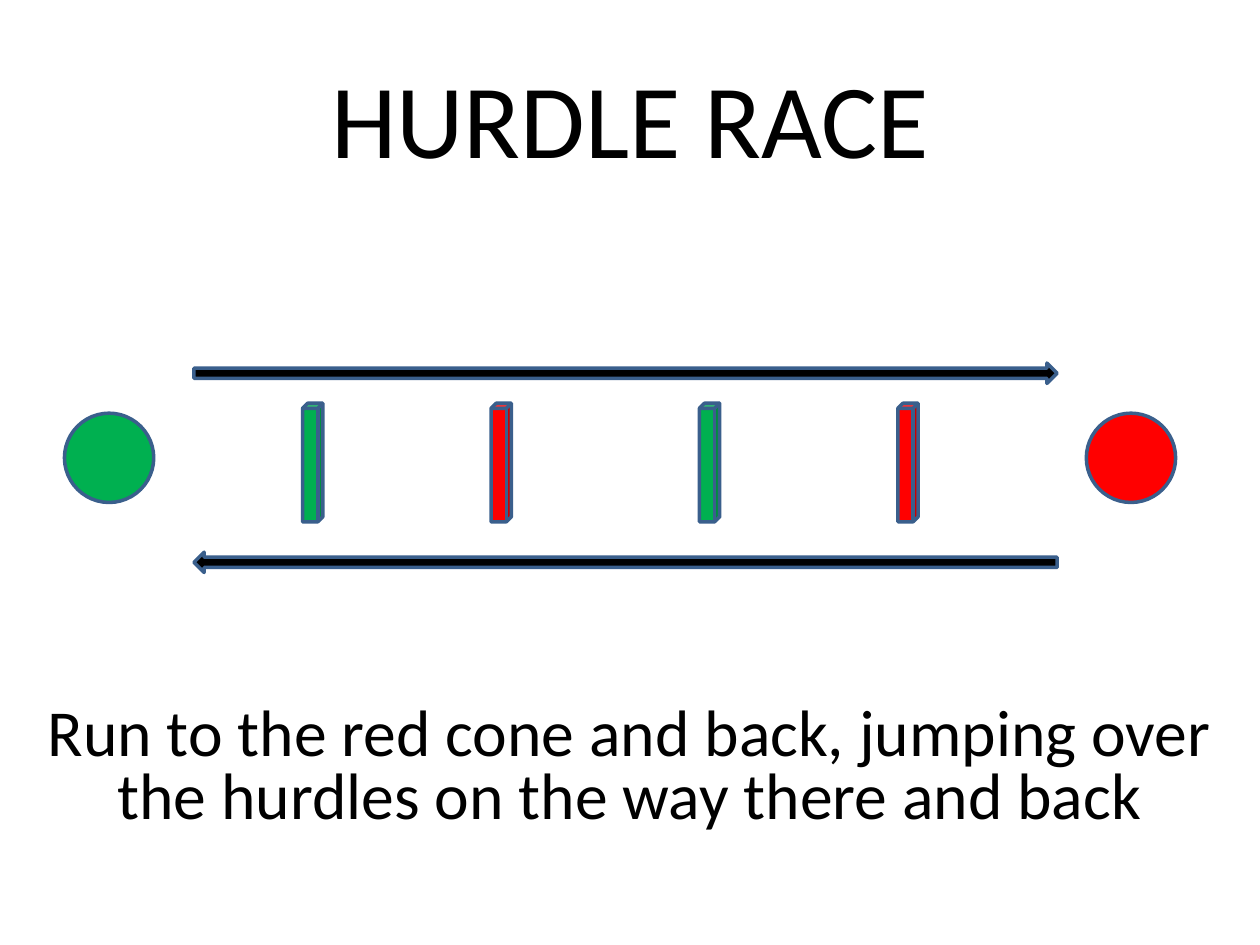
from pptx import Presentation
from pptx.dml.color import RGBColor
from pptx.enum.shapes import MSO_SHAPE
from pptx.enum.text import MSO_ANCHOR, PP_ALIGN
from pptx.util import Cm, Pt

CIRCLE, ARROW, CUBE = MSO_SHAPE.OVAL, MSO_SHAPE.RIGHT_ARROW, MSO_SHAPE.CUBE
MIDDLE, CENTER = MSO_ANCHOR.MIDDLE, PP_ALIGN.CENTER
BLACK, GREEN, RED, OUTLINE = "000000", "00B050", "FF0000", "3A5F8C"


def rgb(value):
    return RGBColor.from_string(value)


class SlideBuilder:
    font = {"name": "Calibri", "bold": False}
    line_width = Pt(2)

    def __init__(self, prs):
        self.s = prs.slides.add_slide(prs.slide_layouts[5])

    def fill_text(self, sp, text, size, spacing=1.0):
        tf = sp.text_frame
        tf.word_wrap = True
        tf.vertical_anchor = MIDDLE
        p = tf.paragraphs[0]
        p.alignment = CENTER
        p.line_spacing = spacing
        r = p.add_run()
        r.text = text
        for name, value in {**self.font, "size": Pt(size)}.items():
            setattr(r.font, name, value)
        r.font.color.rgb = rgb(BLACK)

    def title(self, text, x, y, w, h, size):
        sp = self.s.shapes.title
        place = {"left": x, "top": y, "width": w, "height": h}
        for name, value in place.items():
            setattr(sp, name, Cm(value))
        self.fill_text(sp, text, size)

    def text(self, text, x, y, w, h, size, spacing):
        sp = self.s.shapes.add_textbox(Cm(x), Cm(y), Cm(w), Cm(h))
        self.fill_text(sp, text, size, spacing)

    def shape(self, kind, x, y, w, h, fill, rotation=0):
        sp = self.s.shapes.add_shape(kind, Cm(x), Cm(y), Cm(w), Cm(h))
        sp.shadow.inherit = False
        sp.rotation = rotation
        sp.fill.solid()
        sp.fill.fore_color.rgb = rgb(fill)
        sp.line.color.rgb = rgb(OUTLINE)
        sp.line.width = self.line_width


def main():
    prs = Presentation()
    prs.slide_width, prs.slide_height = Cm(25.4), Cm(19.05)
    slide = SlideBuilder(prs)

    # Title and instructions
    slide.title("HURDLE RACE", 1.27, 0.76, 22.86, 3.18, 60)
    slide.text("Run to the red cone and back, jumping over the hurdles "
               "on the way there and back", 0, 13.92, 25.4, 3.18, 37.5, 0.8)

    # Start and turning cones
    for x, color in ((1.3, GREEN), (21.9, RED)):
        slide.shape(CIRCLE, x, 8.33, 1.8, 1.8, color)

    # Running directions: there and back
    for y, rotation in ((7.32, 0), (11.13, 180)):
        slide.shape(ARROW, 3.91, y, 17.4, 0.41, BLACK, rotation)

    # Hurdles in alternating colours
    for i, x in enumerate((6.1, 9.9, 14.1, 18.1)):
        slide.shape(CUBE, x, 8.13, 0.41, 2.39, (GREEN, RED)[i % 2])

    prs.save("out.pptx")


if __name__ == "__main__":
    main()
